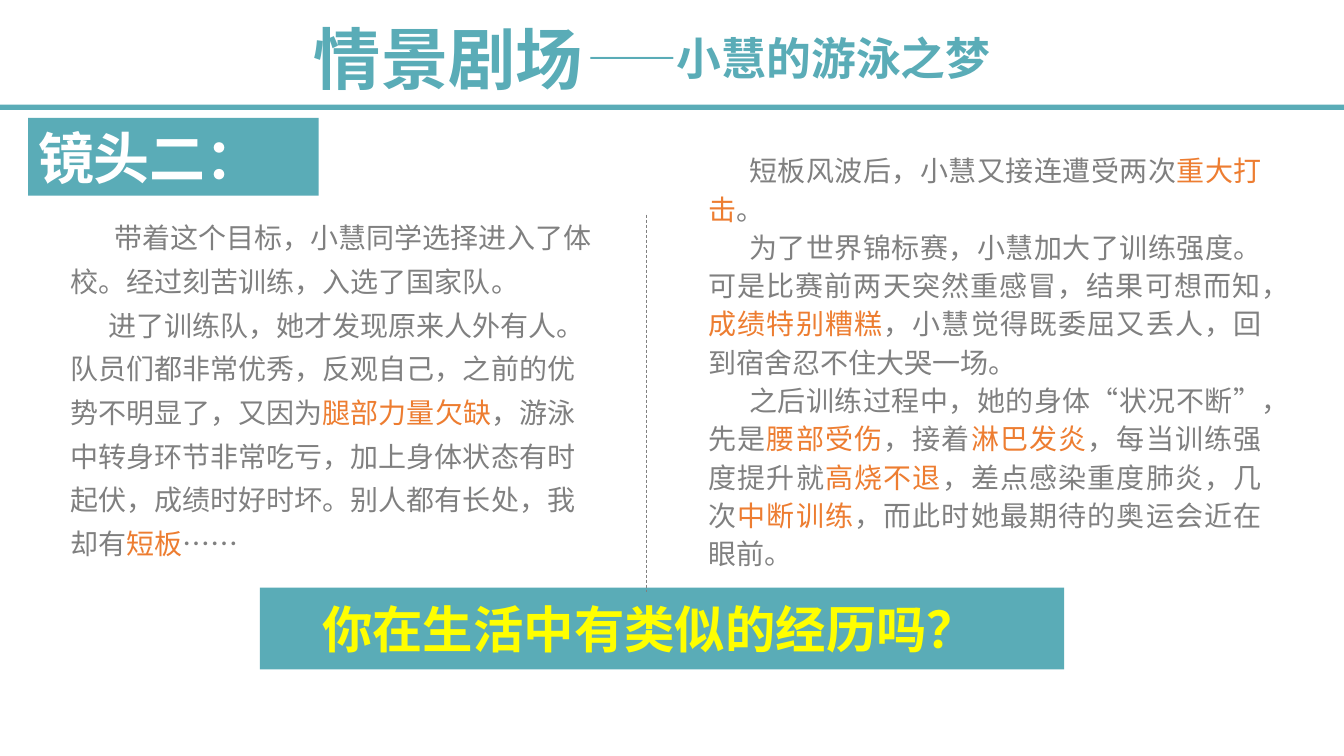
"""Build the scene-two slide of the swimming dream story."""
from pptx import Presentation
from pptx.dml.color import RGBColor
from pptx.enum.dml import MSO_LINE
from pptx.enum.shapes import MSO_CONNECTOR, MSO_SHAPE
from pptx.enum.text import MSO_ANCHOR, MSO_AUTO_SIZE, PP_ALIGN
from pptx.oxml.ns import qn
from pptx.util import Cm, Pt
from lxml.etree import SubElement

TEAL = RGBColor(0x5A, 0xAC, 0xB7)
GRAY = RGBColor(0x80, 0x80, 0x80)
ORANGE = RGBColor(0xED, 0x7D, 0x31)
YELLOW = RGBColor(0xFF, 0xFF, 0x00)
WHITE = RGBColor(0xFF, 0xFF, 0xFF)
FONT = "Noto Sans CJK SC"


def write_text(shape, text, size, color, bold=False, align=PP_ALIGN.LEFT,
               anchor=MSO_ANCHOR.TOP, spacing=1.0, indents=(0,)):
    """Fill a shape, one paragraph per line, with text between bars in orange."""
    frame = shape.text_frame
    frame.word_wrap = True
    frame.auto_size = MSO_AUTO_SIZE.NONE
    frame.vertical_anchor = anchor
    for number, (line, indent) in enumerate(zip(text.split("\n"), indents)):
        paragraph = frame.add_paragraph() if number else frame.paragraphs[0]
        paragraph.alignment = align
        paragraph.line_spacing = spacing
        paragraph.space_before = Pt(0)
        properties = paragraph._p.get_or_add_pPr()
        properties.set("marL", "0")
        properties.set("indent", str(Cm(indent)))
        SubElement(properties, qn("a:buNone"))
        for position, piece in enumerate(line.split("|")):
            run = paragraph.add_run()
            run.text = piece
            run.font.size = Pt(size)
            run.font.bold = bold
            run.font.color.rgb = ORANGE if position % 2 else color
            run.font.name = FONT
            SubElement(run.font._element, qn("a:ea")).set("typeface", FONT)


def place(shape, left, top, width, height):
    """Move and size a shape in centimetres."""
    shape.left, shape.top = Cm(left), Cm(top)
    shape.width, shape.height = Cm(width), Cm(height)


presentation = Presentation()
presentation.slide_width = Cm(33.87)
presentation.slide_height = Cm(19.05)
slide = presentation.slides.add_slide(presentation.slide_layouts[3])
title, left_story, right_story = slide.placeholders

rectangles = []
for box in [(0, 2.64, 33.87, 0.13), (0.71, 2.97, 7.32, 1.96), (6.55, 14.81, 20.27, 2.06)]:
    rectangle = slide.shapes.add_shape(MSO_SHAPE.RECTANGLE, *[Cm(length) for length in box])
    rectangle.shadow.inherit = False
    rectangle.fill.solid()
    rectangle.fill.fore_color.rgb = TEAL
    rectangle.line.fill.background()
    rectangles.append(rectangle)
header_rule, scene_label, question_banner = rectangles
write_text(scene_label, "镜头二：", size=40, color=WHITE, bold=True, anchor=MSO_ANCHOR.MIDDLE)

place(title, 6.78, 0.41, 9.04, 2.06)
title_frame = title.text_frame
title_frame.margin_left = title_frame.margin_right = Cm(0)
title_frame.margin_top = title_frame.margin_bottom = Cm(0)
write_text(title, "情景剧场", size=48, color=TEAL, bold=True,
           align=PP_ALIGN.CENTER, anchor=MSO_ANCHOR.MIDDLE)

subtitle = slide.shapes.add_textbox(Cm(14.55), Cm(0.66), Cm(10.82), Cm(1.63))
write_text(subtitle, "——小慧的游泳之梦", size=32, color=TEAL, bold=True)

divider = slide.shapes.add_connector(
    MSO_CONNECTOR.STRAIGHT, Cm(16.28), Cm(5.41), Cm(16.28), Cm(14.91))
divider.line.color.rgb = GRAY
divider.line.width = Pt(0.5)
divider.line.dash_style = MSO_LINE.DASH
SubElement(divider._element.spPr, qn("a:effectLst"))

place(left_story, 1.52, 5.18, 13.84, 9.04)
write_text(
    left_story,
    "带着这个目标，小慧同学选择进入了体校。经过刻苦训练，入选了国家队。\n"
    "进了训练队，她才发现原来人外有人。队员们都非常优秀，反观自己，之前的优势不明显了，"
    "又因为|腿部力量欠缺|，游泳中转身环节非常吃亏，加上身体状态有时起伏，成绩时好时坏。"
    "别人都有长处，我却有|短板|……",
    size=20, color=GRAY, spacing=1.3, indents=(1.11, 0.95))

place(right_story, 17.6, 3.63, 14.45, 10.9)
write_text(
    right_story,
    "短板风波后，小慧又接连遭受两次|重大打击|。\n"
    "为了世界锦标赛，小慧加大了训练强度。可是比赛前两天突然重感冒，结果可想而知，"
    "|成绩特别糟糕|，小慧觉得既委屈又丢人，回到宿舍忍不住大哭一场。\n"
    "之后训练过程中，她的身体“状况不断”，先是|腰部受伤|，接着|淋巴发炎|，"
    "每当训练强度提升就|高烧不退|，差点感染重度肺炎，几次|中断训练|，"
    "而此时她最期待的奥运会近在眼前。",
    size=20, color=GRAY, align=PP_ALIGN.JUSTIFY, spacing=1.14, indents=(1.03, 1.03, 1.03))

question = slide.shapes.add_textbox(Cm(6.17), Cm(14.94), Cm(18.64), Cm(1.8))
write_text(question, "你在生活中有类似的经历吗？", size=36, color=YELLOW, bold=True, indents=(1.7,))

presentation.save("out.pptx")
